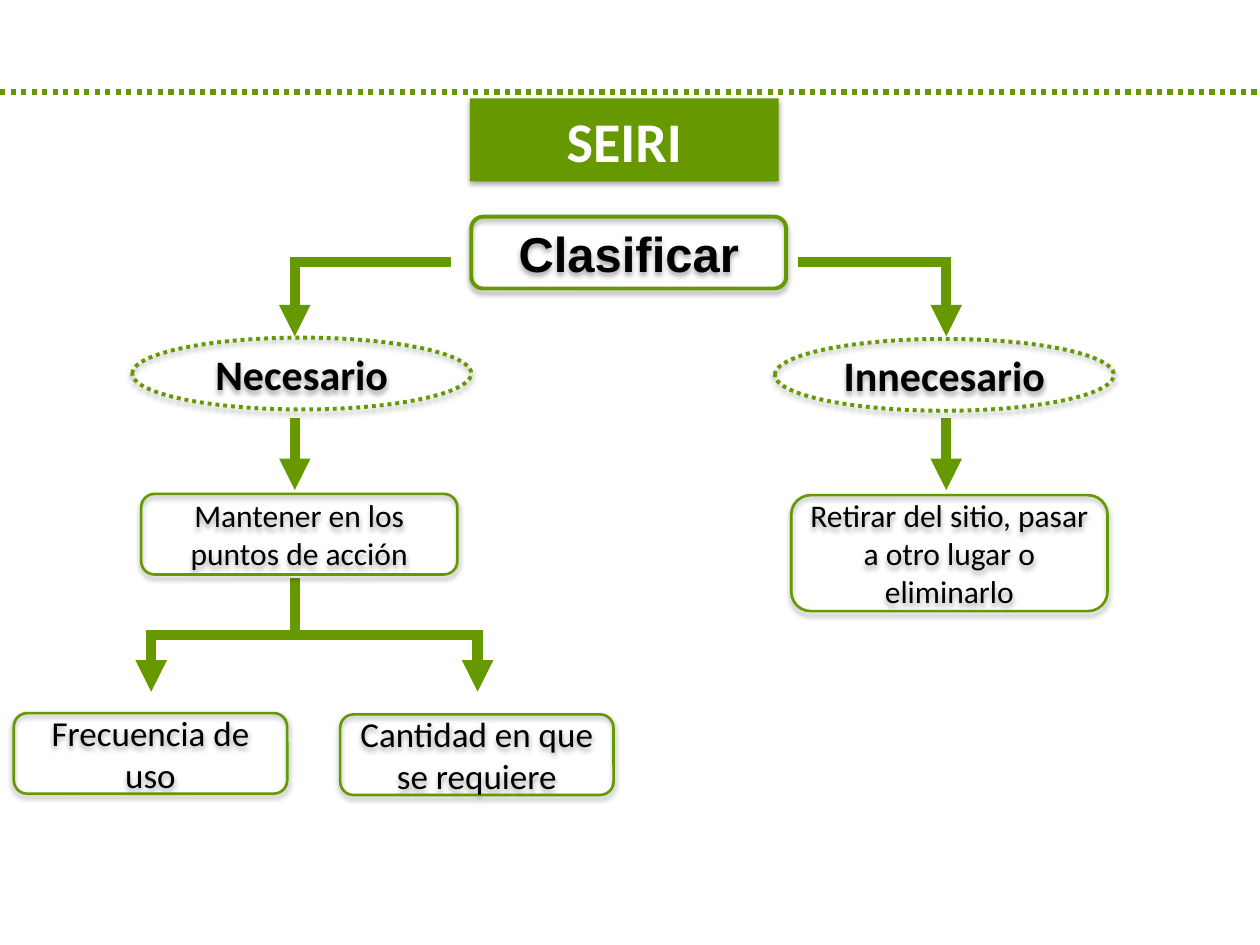
from dataclasses import dataclass

import pptx
import pptx.dml.color
import pptx.enum.dml
import pptx.enum.shapes
import pptx.enum.text
import pptx.oxml
import pptx.oxml.ns
import pptx.util
from pptx.util import Inches

GREEN, BLACK, WHITE = "669900", "000000", "FFFFFF"
NS = pptx.oxml.ns.nsdecls("a")
SHAPE = pptx.enum.shapes.MSO_SHAPE
CONNECTOR = pptx.enum.shapes.MSO_CONNECTOR
SHADOW = (
    f'<a:effectLst {NS}><a:outerShdw blurRad="40000" dist="23000" dir="5400000" '
    'rotWithShape="0"><a:srgbClr val="000000"><a:alpha val="35000"/></a:srgbClr>'
    "</a:outerShdw></a:effectLst>"
)

LEFT_X, RIGHT_X = 2.34, 7.51  # axes of the two branches
BRANCH_Y = 2.08


@dataclass
class Node:
    text: str
    left: float
    top: float
    width: float
    height: float
    size: int
    line: float = 1.5
    bold: bool = False
    font: str = "Calibri"
    oval: bool = False


NODES = [
    Node("Clasificar", 3.74, 1.72, 2.5, 0.57, 28, 2.25, True, "Arial"),
    Node("Necesario", 1.05, 2.68, 2.69, 0.57, 24, 2.25, True, oval=True),
    Node("Innecesario", 6.15, 2.69, 2.69, 0.57, 24, 2.25, True, oval=True),
    Node("Mantener en los puntos de acción", 1.12, 3.92, 2.51, 0.64, 18),
    Node("Retirar del sitio, pasar a otro lugar o eliminarlo", 6.28, 3.93, 2.51, 0.92, 18),
    Node("Frecuencia de uso", 0.11, 5.66, 2.17, 0.64, 20),
    Node("Cantidad en que se requiere", 2.7, 5.67, 2.17, 0.64, 20),
]


def rgb(value: str) -> pptx.dml.color.RGBColor:
    return pptx.dml.color.RGBColor.from_string(value)


def append_xml(parent, xml: str) -> None:
    parent.append(pptx.oxml.parse_xml(xml))


def set_line(line, width: float, dotted: bool = False) -> None:
    line.color.rgb = rgb(GREEN)
    line.width = pptx.util.Pt(width)
    if dotted:
        line.dash_style = pptx.enum.dml.MSO_LINE.ROUND_DOT


def set_text(sp, text: str, size: int, color: str, bold: bool, font: str) -> None:
    tf = sp.text_frame
    tf.text = text
    tf.word_wrap = True
    tf.auto_size = pptx.enum.text.MSO_AUTO_SIZE.NONE
    tf.vertical_anchor = pptx.enum.text.MSO_ANCHOR.MIDDLE
    p = tf.paragraphs[0]
    p.alignment = pptx.enum.text.PP_ALIGN.CENTER
    r = p.runs[0]
    r.font.name = font
    r.font.size = pptx.util.Pt(size)
    r.font.bold = bold
    r.font.color.rgb = rgb(color)


def add_title(slide, text: str) -> None:
    """Turn the title placeholder into a filled rounded box."""
    sp = slide.shapes.title
    sp.left, sp.top = Inches(3.73), Inches(0.78)
    sp.width, sp.height = Inches(2.45), Inches(0.66)
    append_xml(sp._element.spPr, f'<a:prstGeom {NS} prst="roundRect"><a:avLst/></a:prstGeom>')
    sp.fill.solid()
    sp.fill.fore_color.rgb = rgb(GREEN)
    append_xml(sp._element.spPr, SHADOW)
    set_text(sp, text, 32, WHITE, True, "Calibri")


def add_node(slide, node: Node) -> None:
    kind = SHAPE.OVAL if node.oval else SHAPE.ROUNDED_RECTANGLE
    sp = slide.shapes.add_shape(
        kind, Inches(node.left), Inches(node.top), Inches(node.width), Inches(node.height)
    )
    sp.fill.background()
    set_line(sp.line, node.line, node.oval)
    append_xml(sp._element.spPr, SHADOW)
    set_text(sp, node.text, node.size, BLACK, node.bold, node.font)


def add_line(slide, kind, x1: float, y1: float, x2: float, y2: float,
             width: float = 6, dotted: bool = False):
    cxn = slide.shapes.add_connector(kind, Inches(x1), Inches(y1), Inches(x2), Inches(y2))
    set_line(cxn.line, width, dotted)
    append_xml(cxn._element.spPr, f"<a:effectLst {NS}/>")
    return cxn


def add_arrow(slide, kind, x1: float, y1: float, x2: float, y2: float):
    cxn = add_line(slide, kind, x1, y1, x2, y2)
    ln = cxn.line._get_or_add_ln()
    append_xml(ln, f'<a:miter {NS} lim="800000"/>')
    append_xml(ln, f'<a:tailEnd {NS} type="triangle"/>')
    return cxn


def add_corner_arrow(slide, x1: float, y1: float, x2: float, y2: float) -> None:
    """Arrow that runs sideways and then turns down once."""
    cxn = add_arrow(slide, CONNECTOR.ELBOW, x1, y1, x2, y2)
    cxn._element.spPr.find(pptx.oxml.ns.qn("a:prstGeom")).set("prst", "bentConnector2")


def add_fork_arrow(slide, x1: float, y1: float, x2: float, y2: float) -> None:
    """Arrow that runs down, sideways and down: an elbow turned by a quarter."""
    mid_x, mid_y = (x1 + x2) / 2, (y1 + y2) / 2
    side = 1 if x2 > x1 else -1
    half_w, half_h = side * (y2 - y1) / 2, abs(x2 - x1) / 2
    cxn = add_arrow(slide, CONNECTOR.ELBOW,
                    mid_x + half_w, mid_y - half_h, mid_x - half_w, mid_y + half_h)
    turn = 270 if side > 0 else 90
    cxn._element.spPr.find(pptx.oxml.ns.qn("a:xfrm")).set("rot", str(turn * 60000))


def main() -> None:
    prs = pptx.Presentation()
    prs.slide_width, prs.slide_height = Inches(10), Inches(7.5)
    slide = prs.slides.add_slide(prs.slide_layouts[5])

    add_title(slide, "SEIRI")
    add_line(slide, CONNECTOR.STRAIGHT, 0, 0.73, 10, 0.73, width=3, dotted=True)
    for start_x, axis_x in ((3.58, LEFT_X), (6.33, RIGHT_X)):
        add_corner_arrow(slide, start_x, BRANCH_Y, axis_x, 2.67)
        add_arrow(slide, CONNECTOR.STRAIGHT, axis_x, 3.32, axis_x, 3.89)
    for end_x in (1.2, 3.79):
        add_fork_arrow(slide, LEFT_X, 4.59, end_x, 5.49)
    for node in NODES:
        add_node(slide, node)

    prs.save("out.pptx")


if __name__ == "__main__":
    main()
